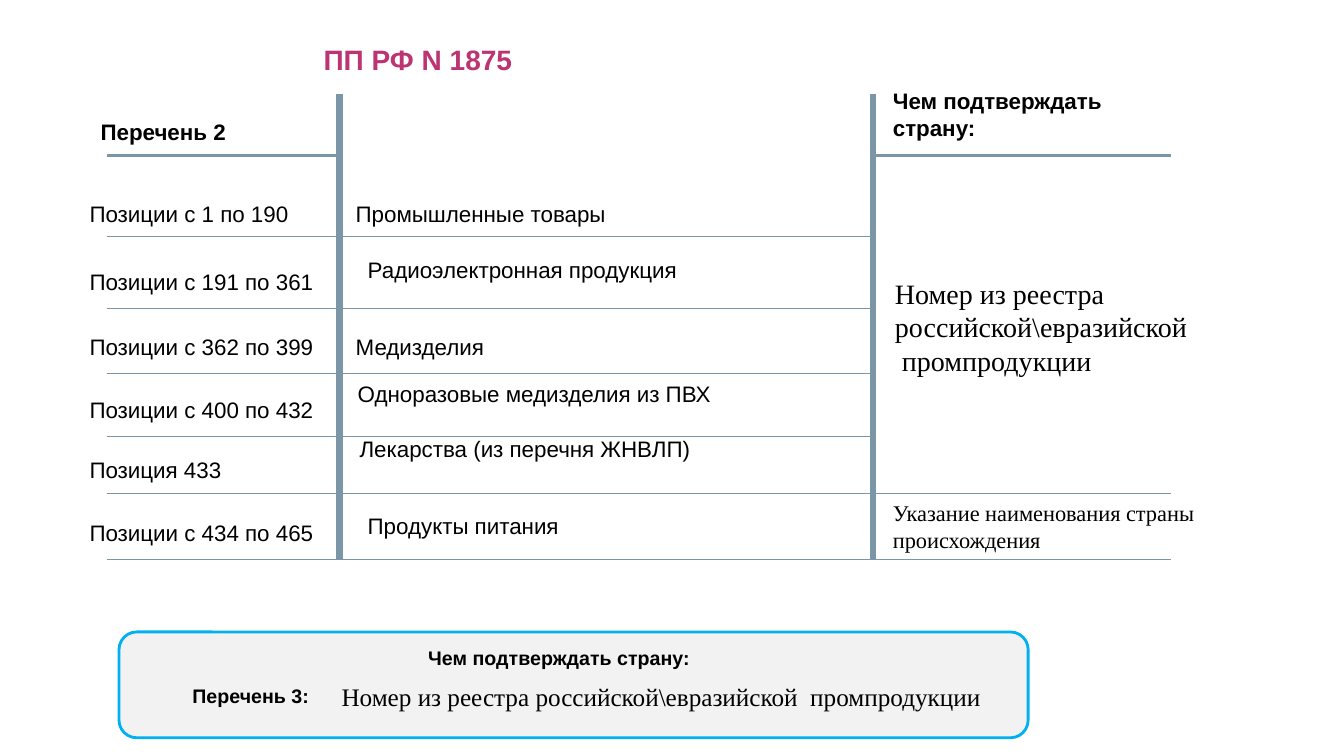
from lxml.etree import SubElement
from pptx import Presentation
from pptx.dml.color import RGBColor
from pptx.enum.shapes import MSO_CONNECTOR, MSO_SHAPE
from pptx.enum.text import MSO_ANCHOR, MSO_AUTO_SIZE, PP_ALIGN
from pptx.oxml.ns import qn
from pptx.util import Pt

COLORS = {
    "title": "BC3472",
    "text": "000000",
    "rule": "7A96A7",
    "panel": "F2F2F2",
    "panel_edge": "00B0F0",
}
SANS, SERIF = "Arial", "Times New Roman"
CONFIRM = "Чем подтверждать страну:"
REGISTRY = "Номер из реестра российской\\евразийской  промпродукции"

LABEL_WIDTH = 203.8
# Columns: bottom rule, positions, their top, goods, their left, top and width
ROWS = [
    (102.2, "Позиции с 1 по 190", 72.7, "Промышленные товары", 170.7, 72.7, 203.8),
    (153.3, "Позиции с 191 по 361", 120.9, "Радиоэлектронная продукция", 179.3, 112.3, 336.2),
    (200.1, "Позиции с 362 по 399", 167.7, "Медизделия", 170.7, 167.7, 336.2),
    (244.8, "Позиции с 400 по 432", 212.4, "Одноразовые медизделия из ПВХ", 172.1, 200.8, 380.2),
    (285.8, "Позиция 433", 255.6, "Лекарства (из перечня ЖНВЛП)", 173.5, 240.4, 336.2),
    (332.6, "Позиции с 434 по 465", 300.2, "Продукты питания", 179.3, 295.2, 336.2),
]


def rgb(name):
    return RGBColor.from_string(COLORS[name])


def write(frame, text, size, font=SANS, bold=False, color="text"):
    frame.word_wrap = True
    frame.auto_size = MSO_AUTO_SIZE.NONE
    frame.vertical_anchor = MSO_ANCHOR.TOP
    paragraph = frame.paragraphs[0]
    paragraph.alignment = PP_ALIGN.LEFT
    run = paragraph.add_run()
    run.text = text
    run.font.name, run.font.size, run.font.bold = font, Pt(size), bold
    run.font.color.rgb = rgb(color)


def add_label(slide, left, top, width, height, text, size=16, **style):
    box = slide.shapes.add_textbox(Pt(left), Pt(top), Pt(width), Pt(height))
    write(box.text_frame, text, size, **style)


def add_rule(slide, x1, y1, x2, y2, weight):
    rule = slide.shapes.add_connector(
        MSO_CONNECTOR.STRAIGHT, Pt(x1), Pt(y1), Pt(x2), Pt(y2))
    rule.line.color.rgb = rgb("rule")
    rule.line.width = Pt(weight)
    SubElement(rule._element.spPr, qn("a:effectLst"))


def add_title(slide, left, top, width, height):
    title = slide.shapes.title
    title.left, title.top = Pt(left), Pt(top)
    title.width, title.height = Pt(width), Pt(height)
    write(title.text_frame, "ПП РФ N 1875", 20, bold=True, color="title")


def add_positions_grid(slide, left, top, width, height):
    """Second list: positions, goods and proof of country between rules."""
    goods_x, proof_x, right = left + 166.3, left + 547.2, left + width
    header_y = top + 43.9

    for x in (goods_x, proof_x):
        add_rule(slide, x, top, x, top + height, 4.5)
    for start, end in ((left, goods_x), (proof_x, right)):
        add_rule(slide, start, header_y, end, header_y, 2.25)

    for index, (rule_y, positions, positions_y, goods, x, y, goods_width) in enumerate(ROWS):
        end = right if index >= len(ROWS) - 2 else proof_x
        add_rule(slide, left, top + rule_y, end, top + rule_y, 0.75)
        add_label(slide, left - 19.4, top + positions_y, LABEL_WIDTH, 26.6, positions)
        add_label(slide, left + x, top + y, goods_width, 26.6, goods)

    add_label(slide, left - 11.5, top + 13.6, LABEL_WIDTH, 26.6, "Перечень 2", bold=True)
    add_label(slide, proof_x + 7.2, top - 8, 204.5, 46, CONFIRM, bold=True)
    add_label(slide, proof_x + 8.7, top + 126.7, 227.5, 80, REGISTRY, 20, font=SERIF)
    add_label(slide, proof_x + 7.2, top + 285.8, 231.1, 46,
              "Указание наименования страны происхождения", font=SERIF)


def add_third_list(slide, left, top, width, height):
    panel = slide.shapes.add_shape(
        MSO_SHAPE.ROUNDED_RECTANGLE, Pt(left), Pt(top), Pt(width), Pt(height))
    panel.shadow.inherit = False
    panel.fill.solid()
    panel.fill.fore_color.rgb = rgb("panel")
    panel.line.color.rgb = rgb("panel_edge")
    panel.line.width = Pt(2)
    add_label(slide, left + 213.8, top + 6.5, 204.5, 24.5, CONFIRM, 14, bold=True)
    add_label(slide, left + 45.3, top + 33.9, LABEL_WIDTH, 24.5, "Перечень 3:", 14, bold=True)
    add_label(slide, left + 151.9, top + 31.7, 477.4, 28.8, REGISTRY, 18, font=SERIF)


def main():
    deck = Presentation()
    deck.slide_width, deck.slide_height = Pt(960), Pt(540)
    slide = deck.slides.add_slide(deck.slide_layouts[5])
    add_title(slide, 223.9, 26.6, 161.3, 30.2)
    add_positions_grid(slide, 76.3, 67, 760.3, 332.6)
    add_third_list(slide, 85, 451.4, 649.4, 75.6)
    deck.save("out.pptx")


if __name__ == "__main__":
    main()
